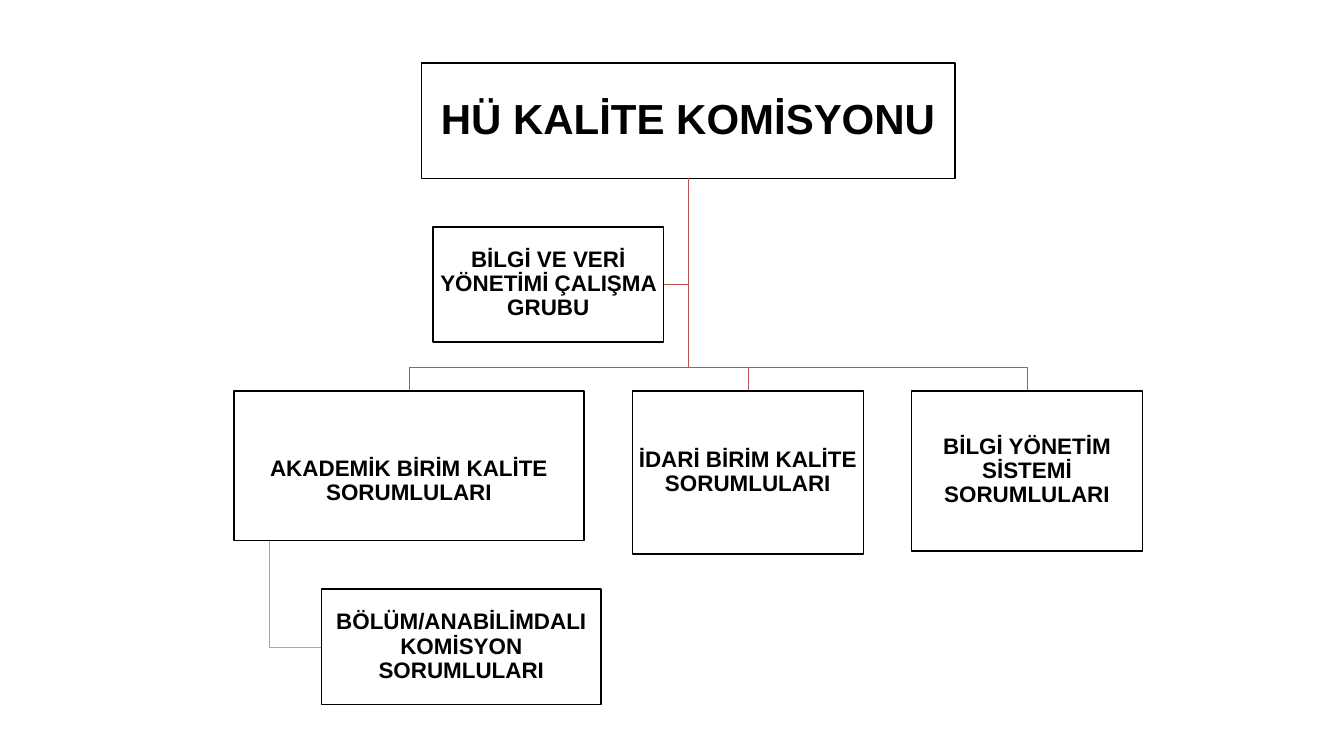
import pptx
import pptx.util
import pptx.dml.color
import pptx.enum.shapes
import pptx.enum.text

Inches = pptx.util.Inches
Pt = pptx.util.Pt
Color = pptx.dml.color.RGBColor.from_string

THEME = {
    "font": "Arial", "ink": "000000", "paper": "FFFFFF",
    "branch": "C0504D", "leaf": "9BBB59",
    "head": 60, "body": 32, "border": 2, "link": 0.75,
}

# name: (text, left, top, width, height, extra inset above the text)
HEAD = ("HÜ KALİTE KOMİSYONU", 8.36, 1.25, 10.59, 2.29, 0)
BOXES = {
    "academic": ("AKADEMİK BİRİM KALİTE SORUMLULARI", 4.64, 7.76, 6.95, 2.97, 0.62),
    "section": ("BÖLÜM/ANABİLİMDALI KOMİSYON SORUMLULARI", 6.38, 11.69, 5.55, 2.29, 0),
    "office": ("İDARİ BİRİM KALİTE SORUMLULARI", 12.55, 7.76, 4.58, 3.23, 0),
    "system": ("BİLGİ YÖNETİM SİSTEMİ SORUMLULARI", 18.09, 7.76, 4.58, 3.17, 0),
    "data": ("BİLGİ VE VERİ YÖNETİMİ ÇALIŞMA GRUBU", 8.59, 4.5, 4.58, 2.29, 0),
}
UNITS = ("academic", "office", "system")
GAP = 0.48      # from the shared bar down to the units
INDENT = 0.1    # share of the parent's width where a side branch starts


def top(box):
    return box[1] + box[3] / 2, box[2]


def bottom(box, share=0.5):
    return box[1] + box[3] * share, box[2] + box[4]


def side(box, right=False):
    return box[1] + box[3] * right, box[2] + box[4] / 2


def link(slide, points, color):
    """Draw an open bent line through the points."""
    spots = [(Inches(x), Inches(y)) for x, y in points]
    pen = slide.shapes.build_freeform(*spots[0])
    pen.add_line_segments(spots[1:], close=False)
    line = pen.convert_to_shape()
    line.shadow.inherit = False
    line.fill.background()
    line.line.color.rgb = Color(THEME[color])
    line.line.width = Pt(THEME["link"])


def dress(shape, box, size, inset):
    """Place a box and give it its frame and text."""
    text, left, y, width, height, extra = box
    shape.left, shape.top = Inches(left), Inches(y)
    shape.width, shape.height = Inches(width), Inches(height)
    shape.fill.solid()
    shape.fill.fore_color.rgb = Color(THEME["paper"])
    shape.line.color.rgb = Color(THEME["ink"])
    shape.line.width = Pt(THEME["border"])

    frame = shape.text_frame
    frame.text = text
    frame.word_wrap = True
    frame.auto_size = pptx.enum.text.MSO_AUTO_SIZE.NONE
    frame.vertical_anchor = pptx.enum.text.MSO_ANCHOR.MIDDLE
    frame.margin_left = frame.margin_right = frame.margin_bottom = Inches(inset)
    frame.margin_top = Inches(inset + extra)
    para = frame.paragraphs[0]
    para.alignment = pptx.enum.text.PP_ALIGN.CENTER
    para.line_spacing = 0.9
    para.space_before = Pt(0)
    font = para.runs[0].font
    font.name, font.size, font.bold = THEME["font"], Pt(THEME[size]), True
    font.color.rgb = Color(THEME["ink"])


def main():
    deck = pptx.Presentation()
    deck.slide_width, deck.slide_height = Inches(26.67), Inches(15)
    slide = deck.slides.add_slide(deck.slide_layouts[5])
    dress(slide.shapes.title, HEAD, "head", 0.04)

    start = bottom(HEAD)
    for name in UNITS:
        x, y = top(BOXES[name])
        link(slide, [start, (start[0], y - GAP), (x, y - GAP), (x, y)], "branch")

    end = side(BOXES["data"], right=True)
    link(slide, [start, (start[0], end[1]), end], "branch")

    stem = bottom(BOXES["academic"], INDENT)
    end = side(BOXES["section"])
    link(slide, [stem, (stem[0], end[1]), end], "leaf")

    for box in BOXES.values():
        shape = slide.shapes.add_shape(
            pptx.enum.shapes.MSO_SHAPE.RECTANGLE, 0, 0, 0, 0)
        shape.shadow.inherit = False
        dress(shape, box, "body", 0.02)

    deck.save("out.pptx")


if __name__ == "__main__":
    main()
